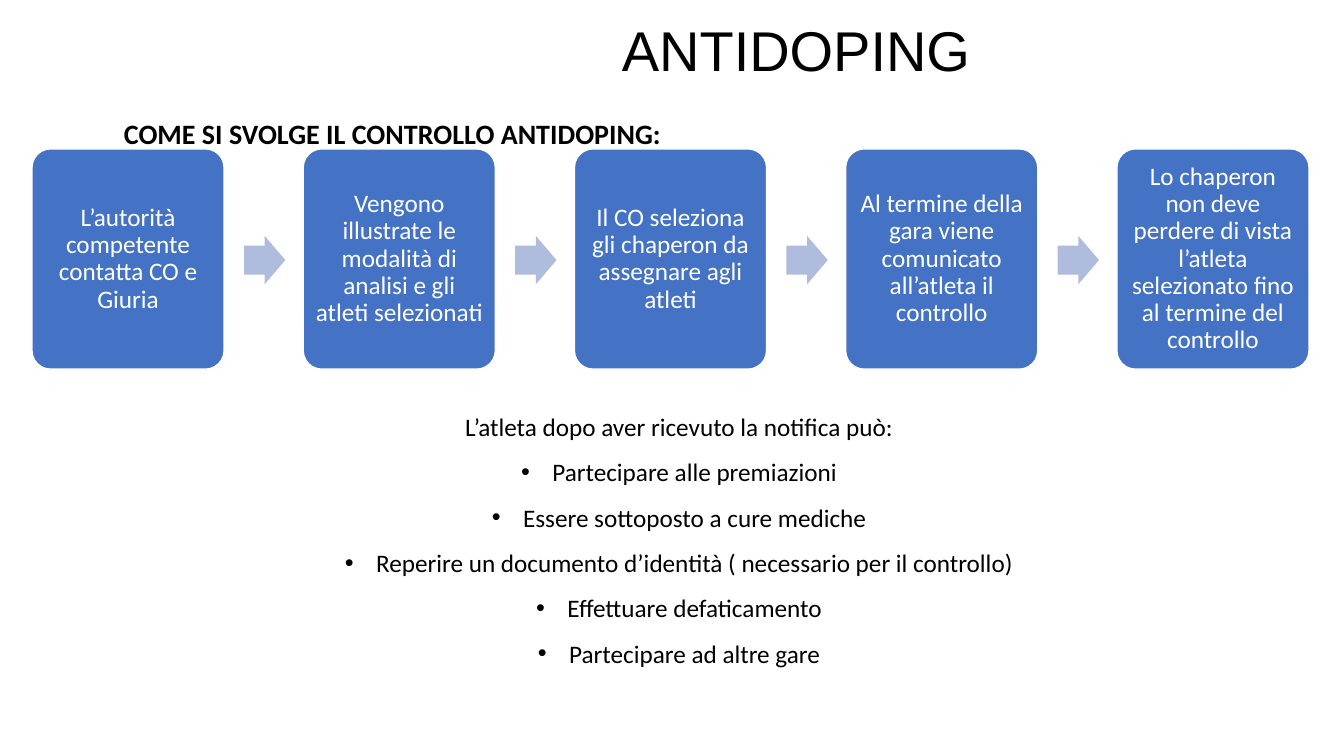
from dataclasses import dataclass

from lxml.etree import SubElement
from pptx import Presentation
from pptx.dml.color import RGBColor
from pptx.enum.shapes import MSO_SHAPE as SHAPE
from pptx.enum.text import MSO_ANCHOR as ANCHOR, MSO_AUTO_SIZE as FIT, PP_ALIGN as ALIGN
from pptx.oxml.ns import qn
from pptx.util import Inches, Pt

BLACK = RGBColor(0x00, 0x00, 0x00)
WHITE = RGBColor(0xFF, 0xFF, 0xFF)
BLUE = RGBColor(0x44, 0x72, 0xC4)
PALE_BLUE = RGBColor(0xB0, 0xBC, 0xDE)

STEP_LEFT, STEP_PITCH = 0.31, 2.69
ARROW_OFFSET = 2.11
STEPS = [
    "L’autorità competente contatta CO e Giuria",
    "Vengono illustrate le modalità di analisi e gli atleti selezionati",
    "Il CO seleziona gli chaperon da assegnare agli atleti",
    "Al termine della gara viene comunicato all’atleta il controllo",
    "Lo chaperon non deve perdere di vista l’atleta selezionato fino al termine del controllo",
]
OPTIONS_INTRO = "L’atleta dopo aver ricevuto la notifica può:"
OPTIONS = [
    "Partecipare alle premiazioni",
    "Essere sottoposto a cure mediche",
    "Reperire un documento d’identità ( necessario per il controllo)",
    "Effettuare defaticamento",
    "Partecipare ad altre gare",
]


@dataclass
class Box:
    left: float
    top: float
    width: float
    height: float

    def inches(self) -> list:
        return [Inches(v) for v in (self.left, self.top, self.width, self.height)]


@dataclass
class Style:
    size: int
    font: str = "Calibri"
    color: RGBColor = BLACK
    bold: bool = False
    align: ALIGN = ALIGN.CENTER
    spacing: float = 1.0


def write(p, text: str, style: Style) -> None:
    p.alignment = style.align
    p.line_spacing = style.spacing
    r = p.add_run()
    r.text = text
    r.font.size = Pt(style.size)
    r.font.name = style.font
    r.font.bold = style.bold
    r.font.color.rgb = style.color


def add_bullet(p) -> None:
    pPr = p._p.get_or_add_pPr()
    pPr.set("marL", str(Inches(0.31)))
    pPr.set("indent", str(-Inches(0.31)))
    color = SubElement(pPr, qn("a:buClr"))
    SubElement(color, qn("a:srgbClr"), val=str(BLACK))
    SubElement(pPr, qn("a:buFont"), typeface="Arial")
    SubElement(pPr, qn("a:buChar"), char="•")


def add_text(shapes, box: Box, text: str, style: Style):
    tf = shapes.add_textbox(*box.inches()).text_frame
    tf.word_wrap = True
    tf.auto_size = FIT.SHAPE_TO_FIT_TEXT
    write(tf.paragraphs[0], text, style)
    return tf


def add_block(shapes, kind: SHAPE, box: Box, fill: RGBColor, adjustments: list[float]):
    sp = shapes.add_shape(kind, *box.inches())
    sp.shadow.inherit = False
    sp.fill.solid()
    sp.fill.fore_color.rgb = fill
    sp.line.fill.background()
    for i, value in enumerate(adjustments):
        sp.adjustments[i] = value
    return sp


def add_step(shapes, left: float, text: str) -> None:
    sp = add_block(shapes, SHAPE.ROUNDED_RECTANGLE, Box(left, 1.47, 1.92, 2.2), BLUE, [0.1])
    sp.line.color.rgb = WHITE
    sp.line.width = Pt(2)
    tf = sp.text_frame
    tf.word_wrap = True
    tf.vertical_anchor = ANCHOR.MIDDLE
    tf.margin_left = tf.margin_right = tf.margin_top = tf.margin_bottom = Inches(0.07)
    write(tf.paragraphs[0], text, Style(18, color=WHITE, spacing=0.9))


def main() -> None:
    prs = Presentation()
    prs.slide_width, prs.slide_height = Inches(13.33), Inches(7.5)
    shapes = prs.slides.add_slide(prs.slide_layouts[6]).shapes

    # Headings
    add_text(shapes, Box(3.45, 0.11, 8.89, 0.77), "ANTIDOPING", Style(40, "Arial"))
    add_text(shapes, Box(1.13, 1.11, 11.22, 0.44), "COME SI SVOLGE IL CONTROLLO ANTIDOPING:",
             Style(20, bold=True, align=ALIGN.LEFT))

    # Process: steps with an arrow between neighbours
    process = shapes.add_group_shape().shapes
    for i, text in enumerate(STEPS):
        left = STEP_LEFT + i * STEP_PITCH
        add_step(process, left, text)
        if i < len(STEPS) - 1:
            add_block(process, SHAPE.RIGHT_ARROW, Box(left + ARROW_OFFSET, 2.34, 0.41, 0.48),
                      PALE_BLUE, [0.6, 0.5])

    # What the athlete may do
    body = Style(18, spacing=1.5)
    tf = add_text(shapes, Box(0.85, 3.88, 11.77, 2.78), OPTIONS_INTRO, body)
    for option in OPTIONS:
        p = tf.add_paragraph()
        add_bullet(p)
        write(p, option, body)

    prs.save("out.pptx")


if __name__ == "__main__":
    main()
